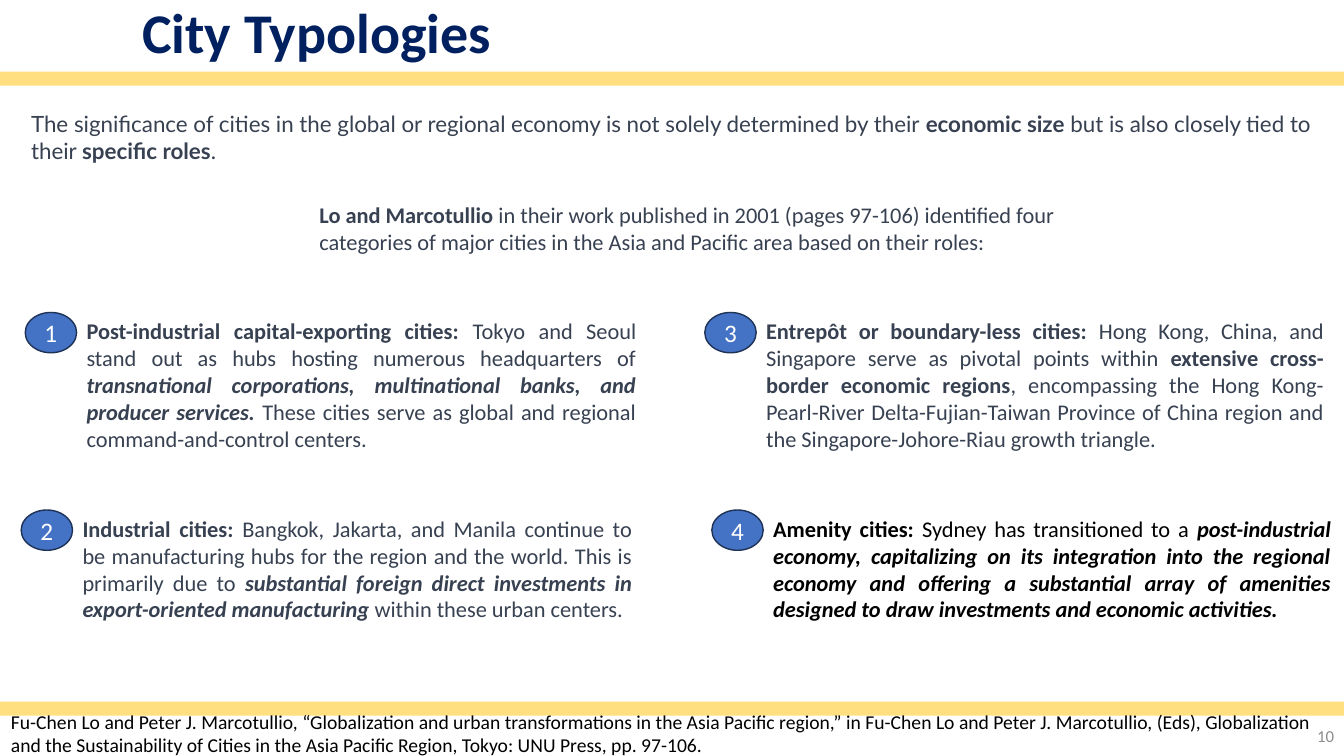
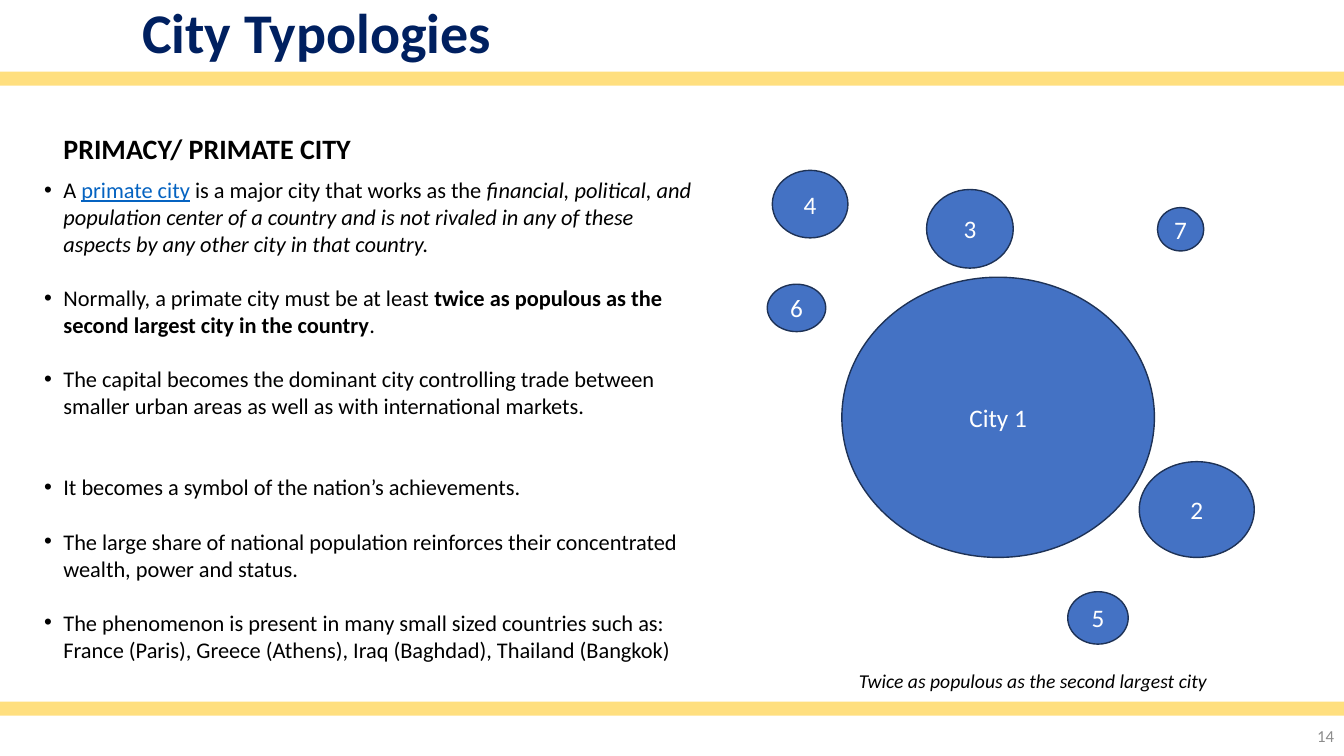
from dataclasses import dataclass

from lxml import etree
from pptx import Presentation
from pptx.dml.color import RGBColor
from pptx.enum.shapes import MSO_SHAPE
from pptx.enum.text import MSO_ANCHOR, MSO_AUTO_SIZE, PP_ALIGN
from pptx.oxml.ns import qn
from pptx.util import Inches, Pt

OVAL, RECTANGLE = MSO_SHAPE.OVAL, MSO_SHAPE.RECTANGLE
LEFT, CENTER, RIGHT, JUSTIFY = PP_ALIGN.LEFT, PP_ALIGN.CENTER, PP_ALIGN.RIGHT, PP_ALIGN.JUSTIFY
TOP, MIDDLE = MSO_ANCHOR.TOP, MSO_ANCHOR.MIDDLE
NO_AUTOFIT = MSO_AUTO_SIZE.NONE


@dataclass(frozen=True)
class Theme:
    """Colours, fonts and type sizes shared by the slides."""
    band: RGBColor = RGBColor.from_string("FFC000")
    title: RGBColor = RGBColor.from_string("002060")
    slate: RGBColor = RGBColor.from_string("374151")
    black: RGBColor = RGBColor.from_string("000000")
    white: RGBColor = RGBColor.from_string("FFFFFF")
    page: RGBColor = RGBColor.from_string("8C8C8C")
    term: RGBColor = RGBColor.from_string("0563C1")
    city: RGBColor = RGBColor.from_string("4472C4")
    city_edge: RGBColor = RGBColor.from_string("1E3256")
    font: str = "Calibri"
    intro_font: str = "Lato"
    title_size: float = 40
    heading_size: float = 20
    label_size: float = 18
    body_size: float = 16
    note_size: float = 14
    page_size: float = 12
    body_line: float = 19.5


THEME = Theme()
SLIDE_WIDTH, SLIDE_HEIGHT = 13.33, 7.5
BAND_TOPS, BAND_HEIGHT = (0.71, 6.96), 0.14

INTRO = [
    ("The significance of cities in the global or regional economy is not solely determined by their ", ""),
    ("economic size", "b"), (" but is also closely tied to their ", ""),
    ("specific roles", "b"), (".", ""),
]
STUDY = [
    ("Lo and Marcotullio ", "b"),
    ("in their work published in 2001 (pages 97-106) identified four categories of major cities "
     "in the Asia and Pacific area based on their roles:", ""),
]
CATEGORIES = [
    (0.25, 3.1, 5.65, THEME.slate, [
        ("Post-industrial capital-exporting cities: ", "b"),
        ("Tokyo and Seoul stand out as hubs hosting numerous headquarters of ", ""),
        ("transnational corporations, multinational banks, and producer services.", "bi"),
        (" These cities serve as global and regional command-and-control centers.", "")]),
    (0.21, 5.06, 5.65, THEME.slate, [
        ("Industrial cities:", "b"),
        (" Bangkok, Jakarta, and Manila continue to be manufacturing hubs for the region and the world. "
         "This is primarily due to ", ""),
        ("substantial foreign direct investments in export-oriented manufacturing", "bi"),
        (" within these urban centers.", "")]),
    (6.99, 3.1, 5.73, THEME.slate, [
        ("Entrepôt or boundary-less cities:", "b"),
        (" Hong Kong, China, and Singapore serve as pivotal points within", ""),
        (" extensive cross-border economic regions", "b"),
        (", encompassing the Hong Kong-Pearl-River Delta-Fujian-Taiwan Province of China region "
         "and the Singapore-Johore-Riau growth triangle.", "")]),
    (7.06, 5.06, 5.73, THEME.black, [
        ("Amenity cities:", "b"), (" Sydney has transitioned to a", ""),
        (" post-industrial economy, capitalizing on its integration into the regional economy and offering "
         "a substantial array of amenities designed to draw investments and economic activities.", "bi")]),
]
SOURCE = (
    "Fu-Chen Lo and Peter J. Marcotullio, “Globalization and urban transformations in the Asia Pacific region,” "
    "in Fu-Chen Lo and Peter J. Marcotullio, (Eds), Globalization and the Sustainability of Cities in the "
    "Asia Pacific Region, Tokyo: UNU Press, pp. 97-106."
)
PRIMACY_POINTS = [
    (0, [("A ", ""), ("primate city", "t"), (" is a major city that works as the", ""),
         (" financial, political, and population center of a country and is not rivaled in any of these "
          "aspects by any other city in that country.", "i")]),
    (1, [("Normally, a primate city must be at least", ""),
         (" twice as populous as the second largest city in the country", "b"), (".", "")]),
    (1, [("The capital becomes the dominant city controlling trade between smaller urban areas "
          "as well as with international markets.", "")]),
    (2, [("It becomes a symbol of the nation’s achievements.", "")]),
    (1, [("The large share of national population reinforces their concentrated wealth, power and status.", "")]),
    (1, [("The phenomenon is present in many small sized countries such as: France (Paris), "
          "Greece (Athens), Iraq (Baghdad), Thailand (Bangkok)", "")]),
]
CITIES = [
    ("City 1", 0.74, 1.06, 3.1, 2.78),
    ("4", 0.05, 0, 0.75, 0.67),
    ("3", 1.58, 0.19, 0.86, 0.78),
    ("7", 3.87, 0.37, 0.46, 0.43),
    ("6", 0, 1.13, 0.58, 0.47),
    ("2", 3.69, 2.89, 1.14, 0.95),
    ("5", 2.98, 4.18, 0.6, 0.52),
]


def inches(*lengths):
    """Turn numbers into lengths in inches."""
    return [Inches(length) for length in lengths]


def format_run(run, size, color, style="", font=THEME.font):
    """Format one run; style letters are b(old), i(talic) and t(erm)."""
    run.font.name, run.font.size = font, Pt(size)
    run.font.bold, run.font.italic = "b" in style, "i" in style
    run.font.underline = "t" in style
    run.font.color.rgb = THEME.term if "t" in style else color


def write_runs(paragraph, pieces, size, color, align=LEFT, font=THEME.font):
    """Fill a paragraph with styled pieces of text."""
    paragraph.alignment = align
    for words, style in pieces:
        run = paragraph.add_run()
        run.text = words
        format_run(run, size, color, style, font)


def text_frame_at(slide, box, anchor=TOP):
    """Add a wrapping text box and return its frame."""
    frame = slide.shapes.add_textbox(*inches(*box)).text_frame
    frame.word_wrap, frame.vertical_anchor = True, anchor
    return frame


def add_text(slide, box, pieces, size=THEME.body_size, color=THEME.slate,
             align=LEFT, font=THEME.font, anchor=TOP):
    """Add a text box holding one paragraph."""
    frame = text_frame_at(slide, box, anchor)
    write_runs(frame.paragraphs[0], pieces, size, color, align, font)


def add_city(slide, box, label):
    """Add a blue oval with a centred label."""
    oval = slide.shapes.add_shape(OVAL, *inches(*box))
    oval.shadow.inherit = False
    oval.fill.solid()
    oval.fill.fore_color.rgb = THEME.city
    oval.line.color.rgb, oval.line.width = THEME.city_edge, Pt(1)
    oval.text_frame.vertical_anchor = MIDDLE
    write_runs(oval.text_frame.paragraphs[0], [(label, "")], THEME.label_size, THEME.white, CENTER)


def add_bands(layout, slide):
    """Make the two translucent bands and hand them to the layout."""
    for shape_id, top in enumerate(BAND_TOPS, 101):
        band = slide.shapes.add_shape(RECTANGLE, *inches(0, top, SLIDE_WIDTH, BAND_HEIGHT))
        band.shadow.inherit = False
        band.fill.solid()
        band.fill.fore_color.rgb = THEME.band
        band.line.fill.background()
        color = next(band._element.spPr.iter(qn("a:srgbClr")))
        etree.SubElement(color, qn("a:alpha")).set("val", "50000")
        band._element.nvSpPr.cNvPr.set("id", str(shape_id))
        layout.shapes._spTree.insert(2, band._element)


def new_slide(prs, layout, title, page):
    """Add a slide with its title and page number."""
    slide = prs.slides.add_slide(layout)
    heading = slide.shapes.title
    heading.left, heading.top, heading.width, heading.height = inches(1.31, 0, 11.5, 1.45)
    frame = heading.text_frame
    frame.text = title
    frame.auto_size, frame.vertical_anchor, frame.word_wrap = NO_AUTOFIT, TOP, True
    paragraph = frame.paragraphs[0]
    paragraph.alignment, paragraph.line_spacing = LEFT, 0.9
    format_run(paragraph.runs[0], THEME.title_size, THEME.title, "b")
    add_text(slide, (12.3, 7.1, 1.03, 0.39), [(page, "")], THEME.page_size, THEME.page, RIGHT, anchor=MIDDLE)
    return slide


def add_category(slide, box, number, pieces, color):
    """Place a numbered oval and its justified text beside it."""
    left, top, width, height = box
    badge_width, badge_height = 0.51, 0.4
    add_text(slide, (left + badge_width, top, width, height), pieces, color=color, align=JUSTIFY)
    add_city(slide, (left, top, badge_width, badge_height), number)


def add_primacy_text(slide, box):
    """Place the heading and the bulleted points."""
    left, top, width, height = box
    heading_height = 0.44
    add_text(slide, (left + 0.19, top, 3.71, heading_height), [("PRIMACY/ PRIMATE CITY", "b")],
             THEME.heading_size, THEME.black)
    frame = text_frame_at(slide, (left, top + heading_height, width, height - heading_height))
    for index, (gap_lines, pieces) in enumerate(PRIMACY_POINTS):
        paragraph = frame.add_paragraph() if index else frame.paragraphs[0]
        properties = paragraph._p.get_or_add_pPr()
        properties.set("marL", str(Inches(0.19)))
        properties.set("indent", str(-Inches(0.19)))
        etree.SubElement(properties, qn("a:buFont")).set("typeface", "Arial")
        etree.SubElement(properties, qn("a:buChar")).set("char", "•")
        if gap_lines:
            paragraph.space_before = Pt(gap_lines * THEME.body_line)
        write_runs(paragraph, pieces, THEME.body_size, THEME.black)


def add_city_diagram(slide, box):
    """Place the city ovals and the caption below them."""
    left, top, width, height = box
    for label, across, down, city_width, city_height in CITIES:
        add_city(slide, (left + across, top + down, city_width, city_height), label)
    caption_height = 0.34
    add_text(slide, (left + 0.81, top + height - caption_height, width - 0.81, caption_height),
             [("Twice as populous as the second largest city", "i")], THEME.note_size, THEME.black)


def fill_categories(slide):
    """Build the slide on the four categories of cities."""
    add_text(slide, (0.21, 1.04, 12.92, 0.64), INTRO, font=THEME.intro_font)
    add_text(slide, (3.07, 1.95, 7.96, 0.64), STUDY)
    for number, (left, top, width, color, pieces) in enumerate(CATEGORIES, 1):
        add_category(slide, (left, top, width, 1.45), str(number), pieces, color)
    add_text(slide, (0.01, 6.99, 13.32, 0.5), [(SOURCE, "")], THEME.note_size, THEME.black)


def fill_primacy(slide):
    """Build the slide on the primate city."""
    add_primacy_text(slide, (0.34, 1.26, 6.71, 5.66))
    add_city_diagram(slide, (7.61, 1.69, 5.72, 5.24))


def main():
    """Build and save the presentation."""
    prs = Presentation()
    prs.slide_width, prs.slide_height = inches(SLIDE_WIDTH, SLIDE_HEIGHT)
    layout = prs.slide_layouts[5]
    categories = new_slide(prs, layout, "City Typologies", "10")
    add_bands(layout, categories)
    fill_categories(categories)
    fill_primacy(new_slide(prs, layout, "City Typologies", "14"))
    prs.save("out.pptx")


if __name__ == "__main__":
    main()
